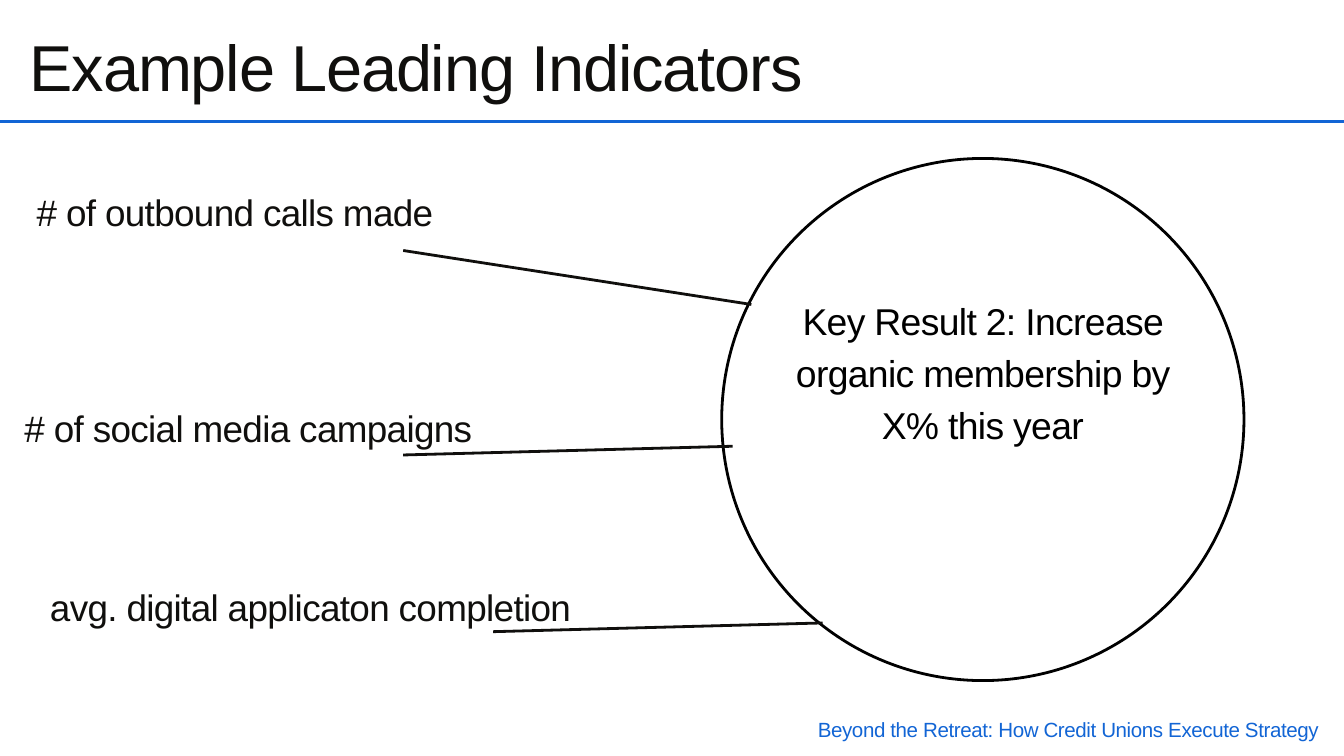
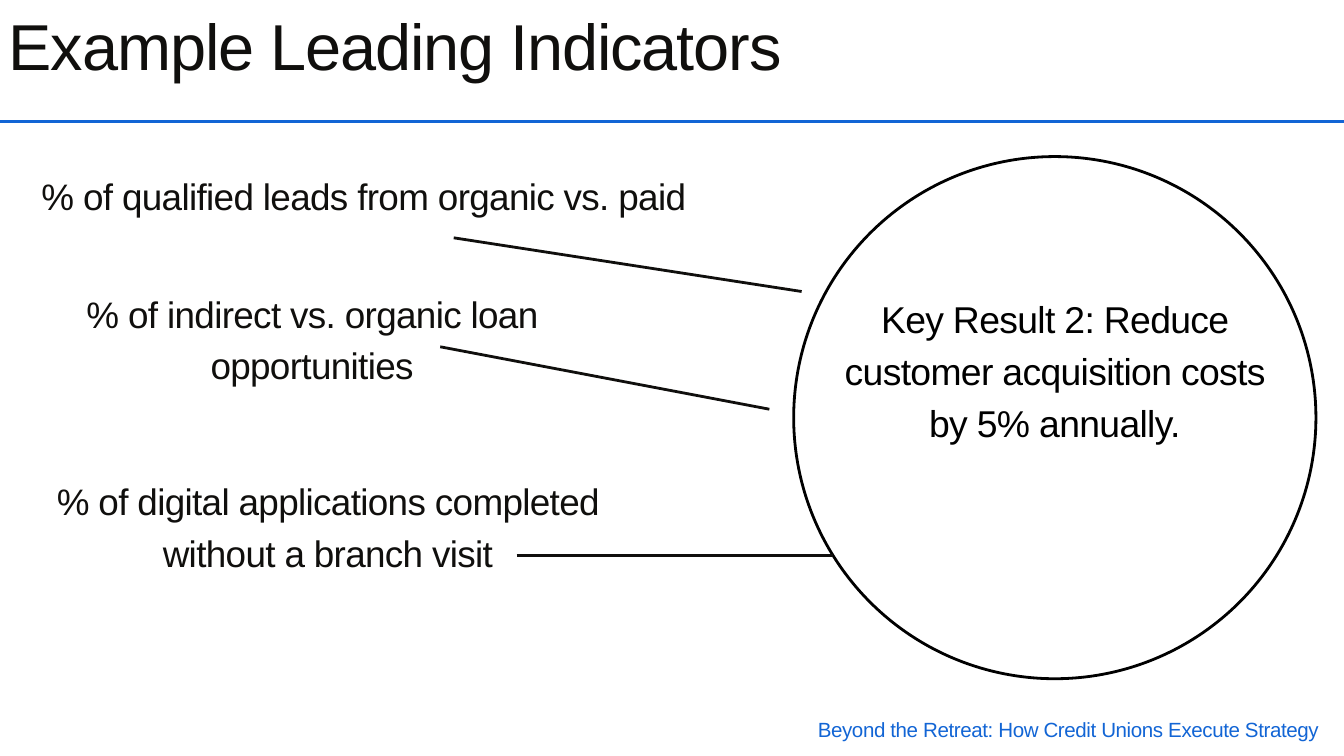
from lxml.etree import SubElement
from pptx import Presentation
from pptx.dml.color import RGBColor
from pptx.enum.shapes import MSO_CONNECTOR as Connector, MSO_SHAPE as Shape
from pptx.enum.text import MSO_ANCHOR as Anchor, MSO_AUTO_SIZE as AutoSize, PP_ALIGN as Align
from pptx.oxml.ns import qn
from pptx.util import Cm, Pt

COLORS = {"ink": "100F0D", "accent": "1265D5", "outline": "000000", "paper": "FFFFFF"}
FONT = "Arial"
TITLE = "Example Leading Indicators"
FOOTER = "Beyond the Retreat: How Credit Unions Execute Strategy"
SLIDE_WIDTH, SLIDE_HEIGHT = 50.8, 28.58
CIRCLE_SIZE = 19.74
RESULT_WIDTH, RESULT_HEIGHT = 16.03, 15.9
LABEL_LINE = 1.95

SLIDES = [
    {
        "title_at": (1.12, 0.53),
        "circle_at": (27.28, 5.99),
        "result": "Key Result 2: Increase organic membership by X% this year",
        "indicators": [
            ("# of outbound calls made", (1.12, 6.88, 15.52), 1, (15.24, 9.47, 28.4, 11.51)),
            ("# of social media campaigns", (-0.56, 15.06, 19.89), 1, (15.24, 17.2, 27.69, 16.87)),
            ("avg. digital applicaton completion", (0.33, 21.82, 22.81), 1, (18.64, 23.88, 31.09, 23.55)),
        ],
    },
    {
        "title_at": (0.33, -0.28),
        "circle_at": (30, 5.92),
        "result": "Key Result 2: Reduce customer acquisition costs by 5% annually.",
        "indicators": [
            ("% of qualified leads from organic vs. paid", (0.86, 6.3, 25.78), 1, (17.15, 8.99, 30.3, 11.02)),
            ("% of indirect vs. organic loan opportunities", (1.85, 10.74, 19.89), 2, (16.64, 13.11, 29.08, 15.47)),
            ("% of digital applications completed without a branch visit", (0.99, 17.83, 22.81), 2,
             (19.53, 21.01, 31.47, 21.01)),
        ],
    },
]


def color(name):
    return RGBColor.from_string(COLORS[name])


def write(shape, text, size, leading, ink, tracking, align=Align.CENTER, anchor=Anchor.TOP):
    frame = shape.text_frame
    frame.word_wrap = True
    frame.auto_size = AutoSize.NONE
    frame.vertical_anchor = anchor
    frame.margin_left = frame.margin_right = frame.margin_top = frame.margin_bottom = 0
    paragraph = frame.paragraphs[0]
    paragraph.alignment = align
    paragraph.line_spacing = Pt(leading)
    paragraph.font.name = FONT
    paragraph.font.size = Pt(size)
    paragraph.font.color.rgb = color(ink)
    run = paragraph.add_run()
    run.text = text
    run._r.get_or_add_rPr().set("spc", str(round(tracking * 100)))


def add_text(slide, box, *style, **options):
    write(slide.shapes.add_textbox(*map(Cm, box)), *style, **options)


def add_line(slide, ends, ink):
    connector = slide.shapes.add_connector(Connector.STRAIGHT, *map(Cm, ends))
    connector.line.color.rgb = color(ink)
    connector.line.width = Pt(3)
    SubElement(connector._element.spPr, qn("a:effectLst"))


def place_title(slide, left, top):
    title = slide.shapes.title
    title.left, title.top, title.width, title.height = map(Cm, (left, top, 29.97, 3.43))
    write(title, TITLE, 69.5, 97.2, "ink", -1.2, align=Align.LEFT)


def add_key_result(slide, left, top, text):
    circle = slide.shapes.add_shape(Shape.OVAL, *map(Cm, (left, top, CIRCLE_SIZE, CIRCLE_SIZE)))
    circle.shadow.inherit = False
    circle.fill.solid()
    circle.fill.fore_color.rgb = color("paper")
    circle.line.color.rgb = color("outline")
    circle.line.width = Pt(3)
    inset = (CIRCLE_SIZE - RESULT_WIDTH) / 2
    add_text(slide, (left + inset, top, RESULT_WIDTH, RESULT_HEIGHT),
             text, 40, 56, "outline", -0.7, anchor=Anchor.MIDDLE)


def add_indicator(slide, text, position, line_count, ends):
    add_line(slide, ends, "ink")
    add_text(slide, (*position, line_count * LABEL_LINE), text, 39.5, 55.2, "ink", -0.7)


def add_footer(slide):
    add_text(slide, (30.48, 26.95, 19.8, 1.09), FOOTER, 22, 30.8, "accent", -0.4)


def main():
    presentation = Presentation()
    presentation.slide_width = Cm(SLIDE_WIDTH)
    presentation.slide_height = Cm(SLIDE_HEIGHT)
    title_only = presentation.slide_layouts[5]
    for content in SLIDES:
        slide = presentation.slides.add_slide(title_only)
        place_title(slide, *content["title_at"])
        add_line(slide, (0, 4.6, SLIDE_WIDTH, 4.6), "accent")
        add_key_result(slide, *content["circle_at"], content["result"])
        add_footer(slide)
        for indicator in content["indicators"]:
            add_indicator(slide, *indicator)
    presentation.save("out.pptx")


if __name__ == "__main__":
    main()
